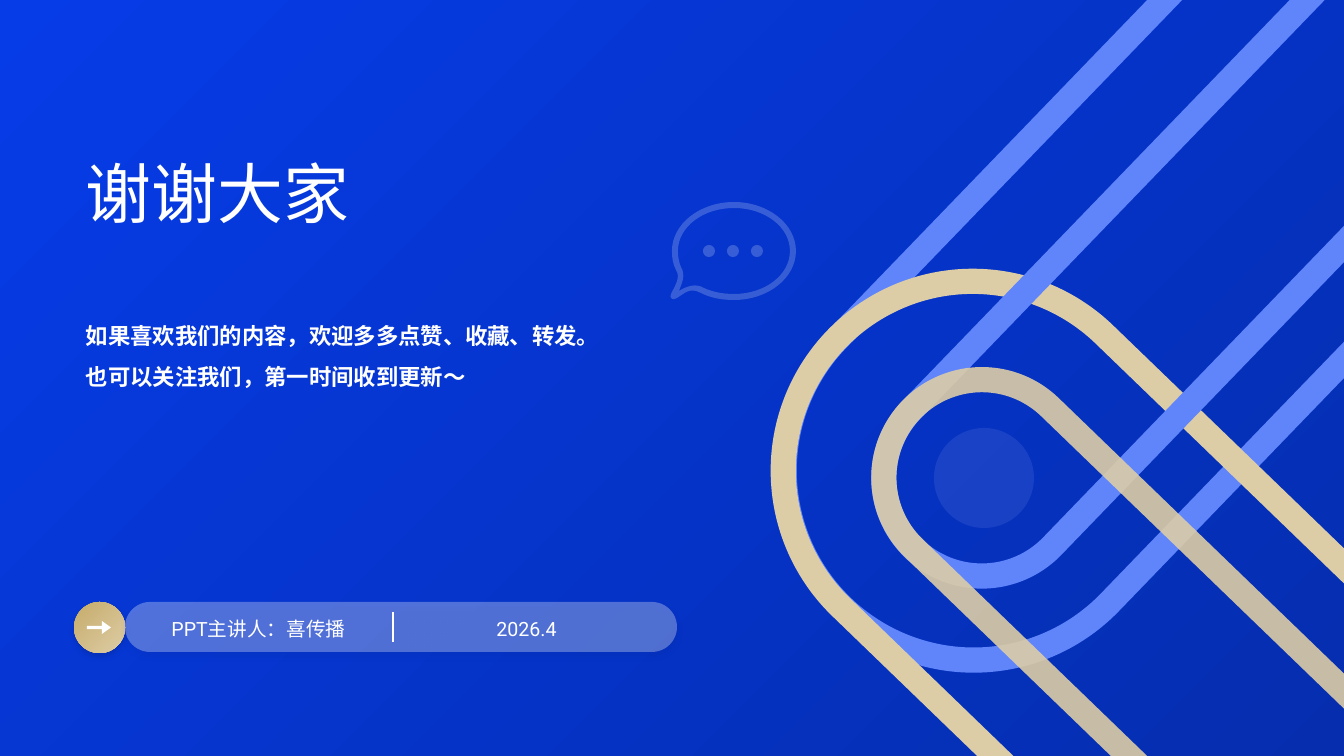
"""Build the closing thank-you slide with crossing bands and a presenter bar."""
from dataclasses import dataclass

from lxml.etree import SubElement
from pptx import Presentation
from pptx.dml.color import RGBColor
from pptx.enum.shapes import MSO_CONNECTOR as Connector, MSO_SHAPE as Shape
from pptx.enum.text import MSO_ANCHOR as Anchor, PP_ALIGN as Align
from pptx.oxml.ns import qn
from pptx.util import Emu, Pt


@dataclass(frozen=True)
class Theme:
    white: str = "FFFFFF"
    back: tuple = ("063CE8", "052DAE")
    gold: tuple = ("C6AB6A", "DDCDA6")
    sky: str = "6085FB"
    mist: str = "CAD6FE"
    shade: str = "031E74"
    latin: str = "Roboto"
    asian: str = "Noto Sans CJK SC"
    title: int = 47
    body: int = 16
    label: int = 14
    band: int = 18


THEME = Theme()
PX = 914400 / 100.8
SLIDE = (0, 0, 1344, 756)

BANDS = [
    ((987, -221, 379, 963), 224, THEME.sky, 100),
    ((930, 219, 379, 787), 314, THEME.gold[1], 100),
    ((1062, -61, 196, 709), 224, THEME.sky, 100),
    ((1022, 321, 196, 580), 314, THEME.gold[1], 90),
]
DISC = (934, 428, 100, 100)
BADGE = (74, 602, 51, 51)
ARROW = (87, 621, 24, 13)
BAR = (125, 602, 552, 50)
DIVIDER = (393, 612, 393, 642)

TEXTS = [
    ("PPT主讲人：喜传播", (154, 610, 209, 34), THEME.label, THEME.latin, False, Align.CENTER, Anchor.MIDDLE, 1.1),
    ("2026.4", (422, 610, 209, 34), THEME.label, THEME.latin, False, Align.CENTER, Anchor.MIDDLE, 1.1),
    ("谢谢大家", (86, 40, 649, 296), THEME.title, THEME.latin, False, Align.LEFT, Anchor.MIDDLE, 1.1),
    ("如果喜欢我们的内容，欢迎多多点赞、收藏、转发。也可以关注我们，第一时间收到更新～",
     (86, 309, 523, 219), THEME.body, THEME.asian, True, Align.LEFT, Anchor.TOP, 1.5),
]

BUBBLE_OUTER = [
    (734, 202),
    (768, 202), (796, 224), (796, 251),
    (796, 278), (768, 300), (734, 300),
    (722, 300), (711, 298), (701, 293),
    (690, 287), (685, 293), (677, 298),
    (673, 301), (669, 298), (671, 294),
    (675, 286), (681, 277), (676, 270),
    (673, 264), (672, 258), (672, 251),
    (672, 224), (700, 202), (734, 202),
]
BUBBLE_INNER = [
    (734, 208),
    (703, 208), (678, 227), (678, 251),
    (678, 257), (679, 262), (681, 267),
    (686, 275), (682, 283), (679, 291),
    (687, 286), (696, 283), (704, 288),
    (713, 292), (723, 294), (734, 294),
    (765, 294), (790, 275), (790, 251),
    (790, 227), (765, 208), (734, 208),
]
DOT_CENTRES = [(709, 251), (733, 251), (757, 251)]
DOT_RADIUS = 6
ARC = 0.55


def emu(*lengths):
    return [Emu(round(length * PX)) for length in lengths]


def set_alpha(color_parent, percent):
    if percent < 100:
        color = next(color_parent.iter(qn("a:srgbClr")))
        SubElement(color, qn("a:alpha"), val=str(percent * 1000))


def paint(shape, fill=None, alpha=100, line=None, line_alpha=100, width=0):
    shape.shadow.inherit = False
    if fill is None:
        shape.fill.background()
    elif isinstance(fill, tuple):
        shape.fill.gradient()
        shape.fill.gradient_angle = 315
        for stop, color in zip(shape.fill.gradient_stops, fill):
            stop.color.rgb = RGBColor.from_string(color)
    else:
        shape.fill.solid()
        shape.fill.fore_color.rgb = RGBColor.from_string(fill)
        set_alpha(shape.element.spPr.find(qn("a:solidFill")), alpha)
    if line is None:
        shape.line.fill.background()
    else:
        shape.line.color.rgb = RGBColor.from_string(line)
        shape.line.width = Pt(width)
        set_alpha(shape.element.spPr.find(qn("a:ln")), line_alpha)


def add_shape(page, kind, place, adjust=(), **look):
    shape = page.shapes.add_shape(kind, *emu(*place))
    for index, value in enumerate(adjust):
        shape.adjustments[index] = value
    paint(shape, **look)
    return shape


def drop_shadow(shape):
    effects = shape.element.spPr.find(qn("a:effectLst"))
    shadow = SubElement(effects, qn("a:outerShdw"), blurRad=str(Pt(4)), dist=str(Pt(3)),
                        dir="5400000", algn="t", rotWithShape="0")
    color = SubElement(shadow, qn("a:srgbClr"), val=THEME.shade)
    SubElement(color, qn("a:alpha"), val="25000")


def add_divider(page):
    divider = page.shapes.add_connector(Connector.STRAIGHT, *emu(*DIVIDER))
    divider.line.color.rgb = RGBColor.from_string(THEME.white)
    divider.line.width = Pt(1)
    SubElement(divider.element.spPr, qn("a:effectLst"))


def circle(x, y, radius):
    """Return the knots and handles of four quarter arcs."""
    points = [(x, y - radius)]
    for dx, dy in [(0, -1), (1, 0), (0, 1), (-1, 0)]:
        for along, across in [(1, ARC), (ARC, 1), (0, 1)]:
            points.append((x + radius * (dx * along - dy * across),
                           y + radius * (dy * along + dx * across)))
    return points


def bend(shape):
    """Turn every three straight segments into one cubic curve."""
    lines = list(shape.element.iter(qn("a:lnTo")))
    for triple in zip(*[iter(lines)] * 3):
        outline = triple[0].getparent()
        curve = outline.makeelement(qn("a:cubicBezTo"), {})
        triple[0].addprevious(curve)
        for segment in triple:
            curve.append(segment[0])
            outline.remove(segment)


def add_bubble(page):
    loops = [circle(x, y, DOT_RADIUS) for x, y in DOT_CENTRES] + [BUBBLE_INNER, BUBBLE_OUTER]
    loops = [[emu(*point) for point in loop] for loop in loops]
    builder = page.shapes.build_freeform(*loops[0][0])
    for index, loop in enumerate(loops):
        if index:
            builder.move_to(*loop[0])
        builder.add_line_segments(loop[1:], close=True)
    bubble = builder.convert_to_shape()
    bend(bubble)
    paint(bubble, fill=THEME.white, alpha=20)


def add_text(page, text, place, size, font, bold, align, anchor, spacing):
    frame = page.shapes.add_textbox(*emu(*place)).text_frame
    frame.word_wrap = True
    frame.vertical_anchor = anchor
    frame.margin_left = frame.margin_right = frame.margin_top = frame.margin_bottom = 0
    para = frame.paragraphs[0]
    para.alignment = align
    para.line_spacing = spacing
    span = para.add_run()
    span.text = text
    span.font.size = Pt(size)
    span.font.bold = bold
    span.font.name = font
    span.font.color.rgb = RGBColor.from_string(THEME.white)
    SubElement(span.font._element, qn("a:ea"), typeface=THEME.asian)


def main():
    deck = Presentation()
    deck.slide_width, deck.slide_height = emu(*SLIDE[2:])
    page = deck.slides.add_slide(deck.slide_layouts[6])
    add_shape(page, Shape.RECTANGLE, SLIDE, fill=THEME.back)
    for place, turn, color, alpha in BANDS:
        band = add_shape(page, Shape.ROUND_2_SAME_RECTANGLE, place, (0.5, 0),
                         line=color, line_alpha=alpha, width=THEME.band)
        band.rotation = turn
    add_shape(page, Shape.OVAL, DISC, fill=THEME.mist, alpha=10)
    drop_shadow(add_shape(page, Shape.OVAL, BADGE, fill=THEME.gold))
    add_shape(page, Shape.RIGHT_ARROW, ARROW, (0.24, 0.7), fill=THEME.white)
    drop_shadow(add_shape(page, Shape.ROUNDED_RECTANGLE, BAR, (0.5,), fill=THEME.white, alpha=30))
    add_divider(page)
    add_bubble(page)
    for entry in TEXTS:
        add_text(page, *entry)
    deck.save("out.pptx")


if __name__ == "__main__":
    main()
